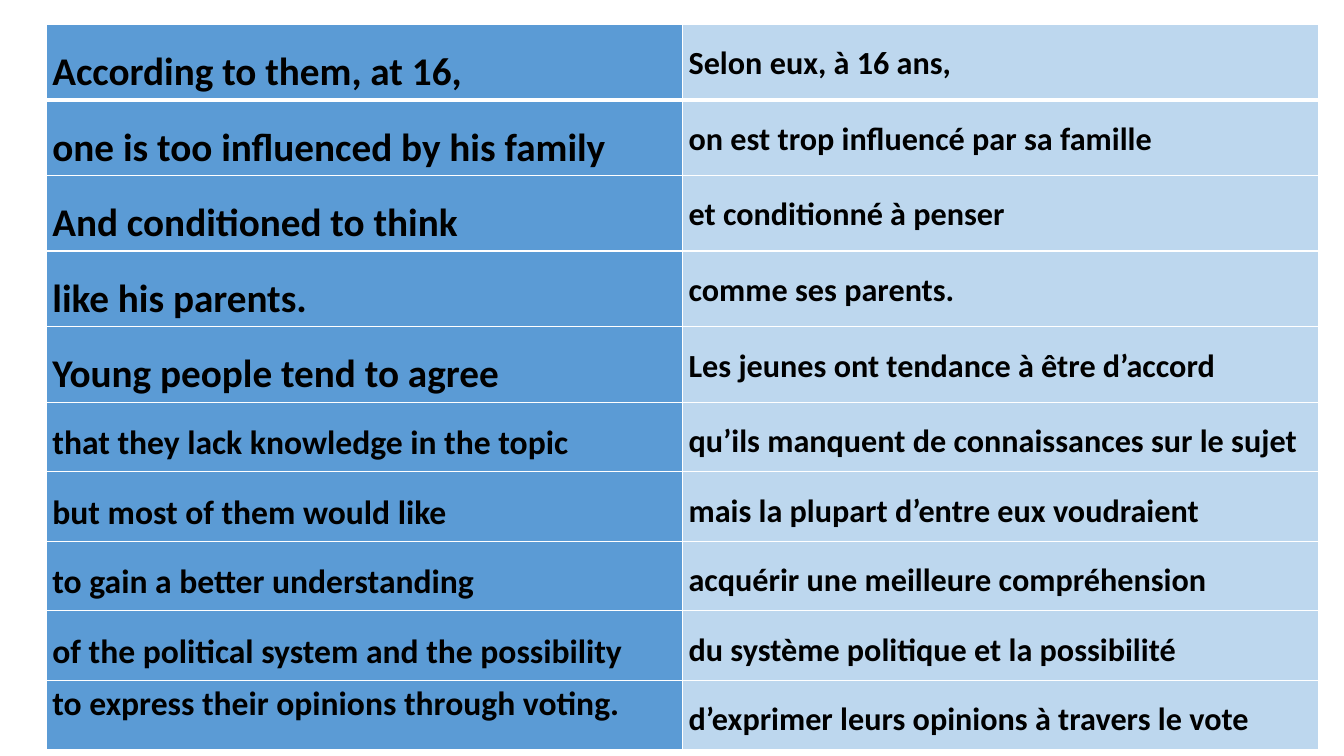
from lxml.etree import SubElement
from pptx import Presentation
from pptx.dml.color import RGBColor
from pptx.enum.text import PP_ALIGN as Align
from pptx.oxml.ns import qn
from pptx.util import Emu, Pt

EMU_PER_PX = 9144  # 100 px to the inch
SLIDE_SIZE = (1333, 750)
TABLE_LEFT, TABLE_TOP = 46, 24
COLUMN_WIDTH = 631
SIDE_MARGIN = 6
ENGLISH_FILL, FRENCH_FILL = "5B9BD5", "BDD7EE"
FRENCH_SIZE = 23

# English size in points, row height in px
LARGE, SMALL = (28, 75), (24, 69)

TRANSLATIONS = [
    (LARGE, "According to them, at 16,", "Selon eux, à 16 ans,"),
    (LARGE, "one is too influenced by his family", "on est trop influencé par sa famille"),
    (LARGE, "And conditioned to think", "et conditionné à penser"),
    (LARGE, "like his parents.", "comme ses parents."),
    (LARGE, "Young people tend to agree", "Les jeunes ont tendance à être d’accord"),
    (SMALL, "that they lack knowledge in the topic",
     "qu’ils manquent de connaissances sur le sujet"),
    (SMALL, "but most of them would like", "mais la plupart d’entre eux voudraient"),
    (SMALL, "to gain a better understanding", "acquérir une meilleure compréhension"),
    (SMALL, "of the political system and the possibility",
     "du système politique et la possibilité"),
    (SMALL, "to express their opinions through voting.",
     "d’exprimer leurs opinions à travers le vote"),
]


def px(length):
    return Emu(length * EMU_PER_PX)


def color(hex_string):
    return RGBColor.from_string(hex_string)


def set_borders(cell, top=1, bottom=1):
    """Draw white cell borders; widths are in points."""
    properties = cell._tc.get_or_add_tcPr()
    widths = {"a:lnL": 1, "a:lnR": 1, "a:lnT": top, "a:lnB": bottom}
    for tag, width in widths.items():
        line = SubElement(properties, qn(tag), w=str(Pt(width)))
        fill = SubElement(line, qn("a:solidFill"))
        SubElement(fill, qn("a:srgbClr"), val="FFFFFF")


def fill_cell(cell, text, size, fill, top, bottom):
    cell.margin_left = cell.margin_right = px(SIDE_MARGIN)
    cell.margin_top = cell.margin_bottom = 0
    # Borders must precede the fill in the cell properties
    set_borders(cell, top, bottom)
    cell.fill.solid()
    cell.fill.fore_color.rgb = color(fill)
    cell.text = text
    paragraph = cell.text_frame.paragraphs[0]
    paragraph.line_spacing = 1.5
    font = paragraph.font
    font.name, font.size, font.bold = "Calibri", Pt(size), True
    font.color.rgb = color("000000")
    return paragraph


def add_translation_table(slide):
    heights = [height for (_, height), _, _ in TRANSLATIONS]
    frame = slide.shapes.add_table(
        len(TRANSLATIONS), 2, px(TABLE_LEFT), px(TABLE_TOP),
        px(2 * COLUMN_WIDTH), px(sum(heights)))
    table = frame.table
    for column in table.columns:
        column.width = px(COLUMN_WIDTH)

    for index, ((size, height), english, french) in enumerate(TRANSLATIONS):
        table.rows[index].height = px(height)
        # Thick rule below the first row
        top = 3 if index == 1 else 1
        bottom = 3 if index == 0 else 1
        left = fill_cell(table.cell(index, 0), english, size, ENGLISH_FILL, top, bottom)
        right = fill_cell(table.cell(index, 1), french, FRENCH_SIZE, FRENCH_FILL, top, bottom)
        # The last two rows have space after the text
        if index >= len(TRANSLATIONS) - 2:
            left.space_after = right.space_after = Pt(8)

    # Exceptions in the English column
    table.cell(8, 0).text_frame.paragraphs[0].alignment = Align.JUSTIFY
    table.cell(9, 0).text_frame.paragraphs[0].line_spacing = 1.07


def main():
    presentation = Presentation()
    presentation.slide_width, presentation.slide_height = map(px, SLIDE_SIZE)
    slide = presentation.slides.add_slide(presentation.slide_layouts[6])
    add_translation_table(slide)
    presentation.save("out.pptx")


if __name__ == "__main__":
    main()
